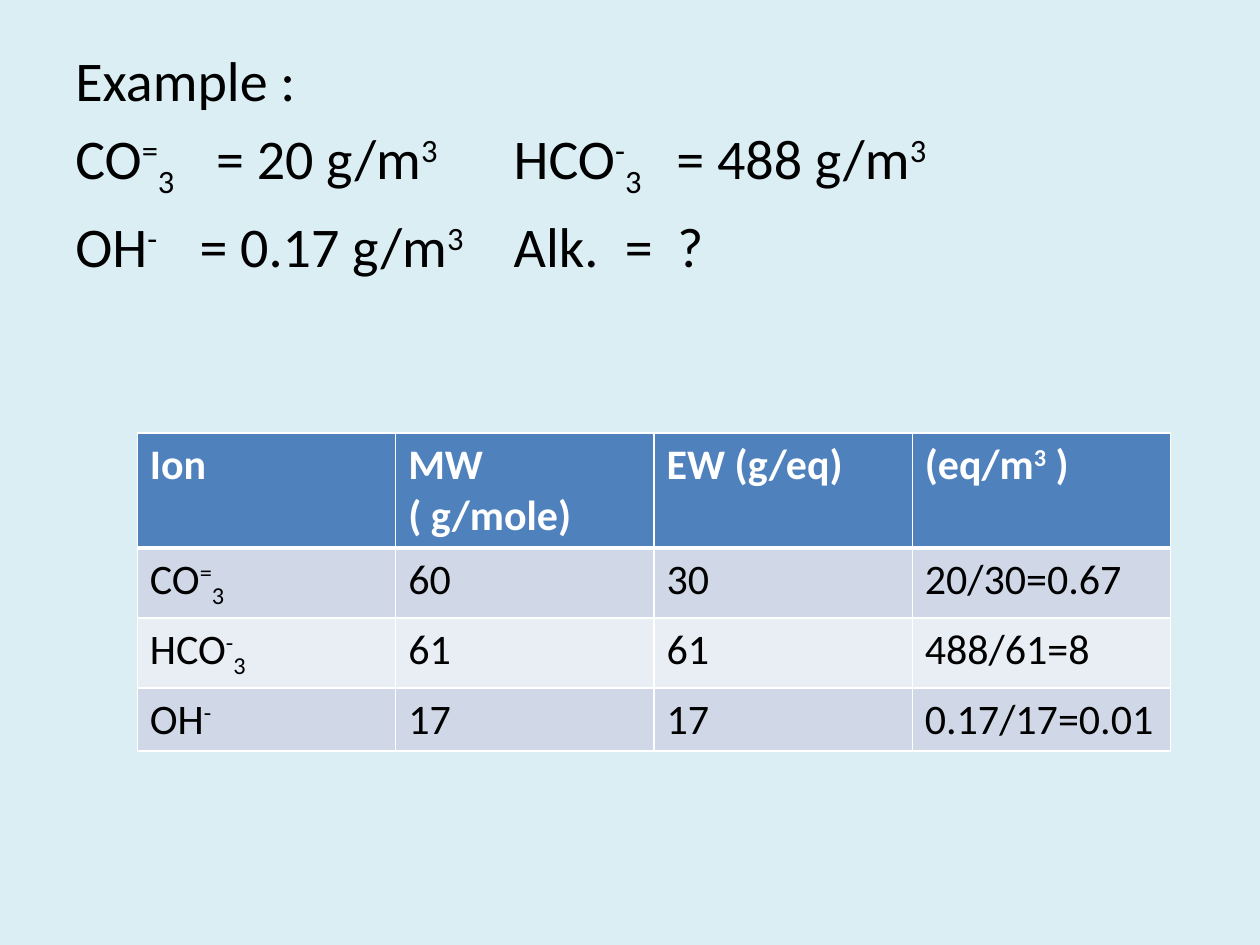
from lxml.etree import SubElement
from pptx import Presentation
from pptx.dml.color import RGBColor
from pptx.oxml.ns import qn
from pptx.util import Pt

COLORS = {
    "background": "DBEEF4",
    "text": "000000",
    "white": "FFFFFF",
    "header": "4F81BD",
    "band_dark": "D0D8E8",
    "band_light": "E9EDF4",
}
FONT = "Calibri"
SUP, SUB = 30000, -25000

CARBONATE = [("CO", 0), ("=", SUP), ("3", SUB)]
BICARBONATE = [("HCO", 0), ("-", SUP), ("3", SUB)]
HYDROXIDE = [("OH", 0), ("-", SUP)]
CUBED = ("3", SUP)

EXAMPLE = [
    ([("Example :", 0)], []),
    (
        CARBONATE + [("\t= 20 g/m", 0), CUBED, ("\t", 0)]
        + BICARBONATE + [("\t= 488 g/m", 0), CUBED],
        [80.5, 250.5, 343.5],
    ),
    (
        HYDROXIDE + [("\t= 0.17 g/m", 0), CUBED, ("\tAlk.\t=\t?", 0)],
        [71, 250.5, 314, 344],
    ),
]


def plain(text):
    """Return a paragraph made of one run on the baseline."""
    return [(text, 0)]


HEADER = [
    [plain("Ion")],
    [plain("MW"), plain("( g/mole)")],
    [plain("EW (g/eq)")],
    [[("(eq/m", 0), CUBED, (" )", 0)]],
]
IONS = [
    (CARBONATE, "60", "30", "20/30=0.67"),
    (BICARBONATE, "61", "61", "488/61=8"),
    (HYDROXIDE, "17", "17", "0.17/17=0.01"),
]


def rgb(name):
    """Look up a colour by name."""
    return RGBColor.from_string(COLORS[name])


def add_runs(p, runs, size, color, bold=False):
    """Fill a paragraph with runs, raised or lowered as given."""
    for text, baseline in runs:
        r = p.add_run()
        r.text = text
        r.font.name = FONT
        r.font.size = Pt(size)
        r.font.bold = bold
        r.font.color.rgb = rgb(color)
        if baseline:
            r.font._element.set("baseline", str(baseline))


def add_tab_stops(p, stops):
    """Give a paragraph left tab stops, in points."""
    tab_list = SubElement(p._p.get_or_add_pPr(), qn("a:tabLst"))
    for stop in stops:
        SubElement(tab_list, qn("a:tab"), pos=str(Pt(stop)), algn="l")


def add_example(s):
    """Add the statement of the example."""
    sp = s.shapes.add_textbox(Pt(36), Pt(22.32), Pt(648), Pt(460))
    tf = sp.text_frame
    tf.word_wrap = True
    for i, (runs, stops) in enumerate(EXAMPLE):
        p = tf.add_paragraph() if i else tf.paragraphs[0]
        p.space_before = Pt(6.4 if i else 0)
        if stops:
            add_tab_stops(p, stops)
        add_runs(p, runs, 32, "text")


def set_borders(cell, bottom):
    """Draw white cell borders with the given bottom width."""
    tc_pr = cell._tc.get_or_add_tcPr()
    for side, width in {"L": 1, "R": 1, "T": 1, "B": bottom}.items():
        line = SubElement(tc_pr, qn(f"a:ln{side}"), w=str(Pt(width)))
        fill = SubElement(line, qn("a:solidFill"))
        SubElement(fill, qn("a:srgbClr"), val=COLORS["white"])


def fill_cell(cell, paragraphs, fill, color, header):
    """Set the text, borders and fill of a table cell."""
    set_borders(cell, 3 if header else 1)
    cell.fill.solid()
    cell.fill.fore_color.rgb = rgb(fill)
    tf = cell.text_frame
    for i, runs in enumerate(paragraphs):
        p = tf.add_paragraph() if i else tf.paragraphs[0]
        add_runs(p, runs, 24, color, header)


def add_ion_table(s):
    """Add the table of ions and their equivalents."""
    rows = [HEADER] + [
        [[ion]] + [[plain(value)] for value in values] for ion, *values in IONS
    ]
    heights = [65.6, 39.6, 39.6, 36]
    frame = s.shapes.add_table(
        len(rows), len(HEADER), Pt(78.5), Pt(247.5), Pt(590.4), Pt(sum(heights))
    )
    table = frame.table
    table.horz_banding = False
    for row, height in zip(table.rows, heights):
        row.height = Pt(height)
    for i, row in enumerate(rows):
        header = i == 0
        fill = "header" if header else "band_dark" if i % 2 else "band_light"
        color = "white" if header else "text"
        for j, paragraphs in enumerate(row):
            fill_cell(table.cell(i, j), paragraphs, fill, color, header)


def main():
    """Build and save the slide."""
    prs = Presentation()
    prs.slide_width, prs.slide_height = Pt(720), Pt(540)
    s = prs.slides.add_slide(prs.slide_layouts[6])
    s.background.fill.solid()
    s.background.fill.fore_color.rgb = rgb("background")
    add_example(s)
    add_ion_table(s)
    prs.save("out.pptx")


if __name__ == "__main__":
    main()
